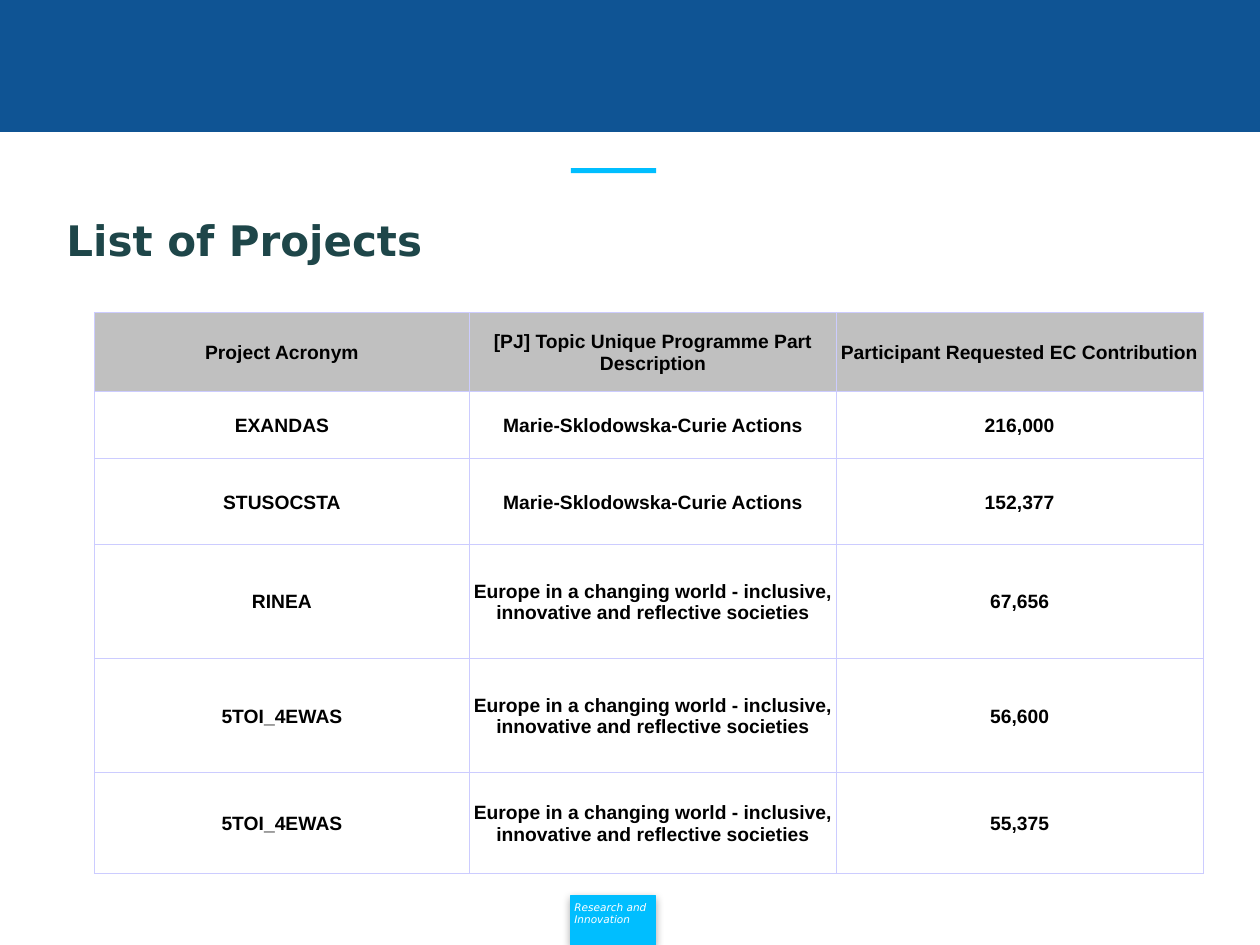
from lxml.etree import SubElement
from pptx import Presentation
from pptx.dml.color import RGBColor
from pptx.enum.shapes import MSO_SHAPE
from pptx.enum.text import MSO_ANCHOR, PP_ALIGN
from pptx.oxml.ns import qn
from pptx.util import Cm, Pt

COLORS = {
    "navy": "0F5494",
    "cyan": "00BEFF",
    "title": "1E4649",
    "header": "C0C0C0",
    "border": "CCCCFF",
    "black": "000000",
    "white": "FFFFFF",
}
TITLE = "List of Projects"
FOOTER = ["Research and", "Innovation"]
ACTIONS = "Marie-Sklodowska-Curie Actions"
SOCIETIES = "Europe in a changing world - inclusive, innovative and reflective societies"
PROJECTS = [
    ("Project Acronym", "[PJ] Topic Unique Programme Part Description",
     "Participant Requested EC Contribution"),
    ("EXANDAS", ACTIONS, "216,000"),
    ("STUSOCSTA", ACTIONS, "152,377"),
    ("RINEA", SOCIETIES, "67,656"),
    ("5TOI_4EWAS", SOCIETIES, "56,600"),
    ("5TOI_4EWAS", SOCIETIES, "55,375"),
]
COLUMN_WIDTHS = [7.57, 7.39, 7.39]
ROW_HEIGHTS = [1.6, 1.35, 1.73, 2.29, 2.31, 2.03]


def rgb(name):
    return RGBColor.from_string(COLORS[name])


def write(text_frame, lines, size, color, font="DejaVu Sans", bold=False,
          italic=False, align=PP_ALIGN.LEFT):
    for index, line in enumerate(lines):
        paragraph = text_frame.add_paragraph() if index else text_frame.paragraphs[0]
        paragraph.alignment = align
        run = paragraph.add_run()
        run.text = line
        run.font.name = font
        run.font.size = Pt(size)
        run.font.bold = bold
        run.font.italic = italic
        run.font.color.rgb = rgb(color)


def add_bar(slide, left, top, width, height, color, outlined=True):
    shape = slide.shapes.add_shape(
        MSO_SHAPE.RECTANGLE, Cm(left), Cm(top), Cm(width), Cm(height))
    shape.shadow.inherit = False
    shape.fill.solid()
    shape.fill.fore_color.rgb = rgb(color)
    if outlined:
        shape.line.color.rgb = rgb(color)
        shape.line.width = Pt(0.75)
    else:
        shape.line.fill.background()
    return shape


def add_color(parent, color):
    return SubElement(parent, qn("a:srgbClr"), val=COLORS[color])


def add_footer(slide):
    shape = add_bar(slide, 11.51, 18.06, 1.7, 0.99, "cyan")
    effects = shape._element.spPr.find(qn("a:effectLst"))
    shadow = SubElement(effects, qn("a:outerShdw"), blurRad=str(Pt(5)),
                        dist=str(Pt(1.8)), dir="5400000", rotWithShape="0")
    SubElement(add_color(shadow, "black"), qn("a:alpha"), val="35000")
    frame = shape.text_frame
    frame.word_wrap = True
    frame.vertical_anchor = MSO_ANCHOR.TOP
    frame.margin_left, frame.margin_right = Cm(0.07), Cm(0.07)
    frame.margin_top, frame.margin_bottom = Cm(0.1), Cm(0.13)
    write(frame, FOOTER, size=6, color="white", italic=True)


def add_title(slide):
    box = slide.shapes.add_textbox(Cm(1.09), Cm(3.73), Cm(22.86), Cm(2.21))
    box.text_frame.word_wrap = True
    box.text_frame.vertical_anchor = MSO_ANCHOR.MIDDLE
    write(box.text_frame, [TITLE], size=24, color="title", bold=True)


def add_borders(cell):
    properties = cell._tc.get_or_add_tcPr()
    for side in ("lnL", "lnR", "lnT", "lnB"):
        line = SubElement(properties, qn(f"a:{side}"), w=str(Pt(0.5)))
        add_color(SubElement(line, qn("a:solidFill")), "border")


def add_project_table(slide):
    table = slide.shapes.add_table(
        len(PROJECTS), len(COLUMN_WIDTHS), Cm(1.9), Cm(6.3),
        Cm(sum(COLUMN_WIDTHS)), Cm(sum(ROW_HEIGHTS))).table
    table.horz_banding = False
    for column, width in zip(table.columns, COLUMN_WIDTHS):
        column.width = Cm(width)
    for row_index, (row, height) in enumerate(zip(table.rows, ROW_HEIGHTS)):
        row.height = Cm(height)
        for cell, text in zip(row.cells, PROJECTS[row_index]):
            add_borders(cell)
            if row_index == 0:
                cell.fill.solid()
                cell.fill.fore_color.rgb = rgb("header")
            else:
                cell.fill.background()
            cell.margin_left = cell.margin_right = cell.margin_top = Cm(0.03)
            cell.margin_bottom = 0
            cell.vertical_anchor = MSO_ANCHOR.MIDDLE
            write(cell.text_frame, [text], size=11, color="black", font="Arial",
                  bold=True, align=PP_ALIGN.CENTER)


def main():
    """Build the project list slide."""
    presentation = Presentation()
    presentation.slide_width, presentation.slide_height = Cm(25.4), Cm(19.05)
    slide = presentation.slides.add_slide(presentation.slide_layouts[6])
    add_bar(slide, 0, 0, 25.4, 2.66, "navy")
    add_footer(slide)
    add_bar(slide, 11.51, 3.39, 1.72, 0.1, "cyan", outlined=False)
    add_title(slide)
    add_project_table(slide)
    presentation.save("out.pptx")


if __name__ == "__main__":
    main()
